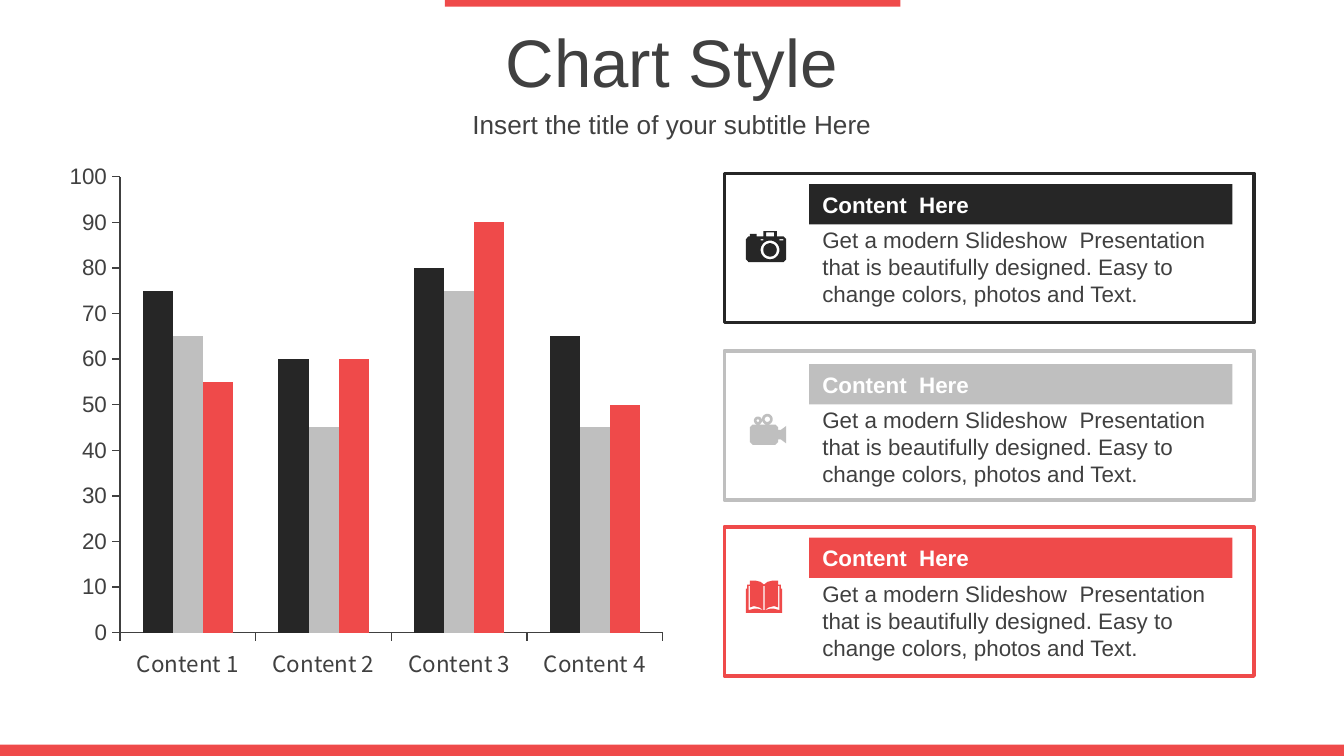
import math
from dataclasses import dataclass

import lxml.etree
import pptx
import pptx.chart.data
import pptx.dml.color
import pptx.enum.chart
import pptx.enum.shapes
import pptx.enum.text
import pptx.oxml.ns
import pptx.util

Inches = pptx.util.Inches
Pt = pptx.util.Pt


@dataclass(frozen=True)
class Theme:
    dark: str = "262626"
    grey: str = "BFBFBF"
    red: str = "EF4A4A"
    white: str = "FFFFFF"
    text: str = "404040"
    font: str = "Arial"
    category_font: str = "Noto Sans CJK KR"
    title_size: int = 36
    subtitle_size: int = 14
    body_size: int = 12
    frame_width: int = 2
    axis_width: float = 0.75


def rgb(color):
    return pptx.dml.color.RGBColor.from_string(color)


def set_font(font, name, size, color, bold=False):
    font.name, font.size, font.bold = name, Pt(size), bold
    font.color.rgb = rgb(color)


def write_text(shape, text, *, font, size, color, bold=False, align="LEFT"):
    frame = shape.text_frame
    frame.word_wrap = True
    frame.vertical_anchor = pptx.enum.text.MSO_ANCHOR.MIDDLE
    paragraph = frame.paragraphs[0]
    paragraph.alignment = pptx.enum.text.PP_ALIGN[align]
    run = paragraph.add_run()
    run.text = text
    set_font(run.font, font, size, color, bold)


def circle(x, y, radius, steps=32):
    angles = [2 * math.pi * step / steps for step in range(steps)]
    return [(x + radius * math.cos(a), y + radius * math.sin(a)) for a in angles]


def box(left, top, right, bottom):
    return [(left, top), (right, top), (right, bottom), (left, bottom)]


def mirror(points, axis):
    """Reflect points across a vertical line and reverse their order."""
    return [(2 * axis - x, y) for x, y in reversed(points)]


def camera_outlines():
    body = [(5.55, 1.78), (5.57, 1.76), (5.58, 1.76), (5.58, 1.74), (5.63, 1.74),
            (5.63, 1.76), (5.68, 1.76), (5.68, 1.72), (5.78, 1.72), (5.78, 1.76),
            (5.83, 1.76), (5.85, 1.78), (5.85, 1.93), (5.83, 1.95), (5.57, 1.95),
            (5.55, 1.93)]
    return [body, circle(5.73, 1.86, 0.07), circle(5.73, 1.86, 0.05),
            box(5.66, 1.78, 5.68, 1.79), box(5.8, 1.78, 5.83, 1.79),
            box(5.7, 1.73, 5.76, 1.76)]


def camcorder_outlines():
    body = [(5.58, 3.18), (5.6, 3.16), (5.77, 3.16), (5.79, 3.18), (5.79, 3.2),
            (5.81, 3.2), (5.85, 3.17), (5.85, 3.3), (5.81, 3.27), (5.79, 3.27),
            (5.79, 3.29), (5.77, 3.31), (5.6, 3.31), (5.58, 3.29)]
    return [body, circle(5.71, 3.12, 0.04), circle(5.71, 3.12, 0.02),
            circle(5.64, 3.13, 0.03), circle(5.64, 3.13, 0.01)]


def book_outlines():
    left_spine, right_spine = 5.68, 5.69
    middle = (left_spine + right_spine) / 2
    cover = [(5.55, 4.56), (5.55, 4.38), (5.56, 4.38), (5.56, 4.35), (5.58, 4.35),
             (5.58, 4.32), (5.62, 4.32), (5.66, 4.33), (middle, 4.35)]
    page_edge = [(5.57, 4.36), (5.58, 4.36), (5.58, 4.52), (5.61, 4.51),
                 (5.65, 4.52), (5.68, 4.54), (5.64, 4.53), (5.61, 4.53), (5.57, 4.54)]
    return [cover + mirror(cover, middle), page_edge, mirror(page_edge, middle),
            box(left_spine, 4.36, right_spine, 4.54)]


class SlideBuilder:
    def __init__(self, slide, theme):
        self.slide, self.theme = slide, theme

    def style(self, shape, fill, line=None):
        shape.shadow.inherit = False
        shape.fill.solid()
        shape.fill.fore_color.rgb = rgb(fill)
        if line:
            shape.line.color.rgb = rgb(line)
            shape.line.width = Pt(self.theme.frame_width)
        else:
            shape.line.fill.background()

    def rectangle(self, left, top, width, height, fill, line=None):
        shape = self.slide.shapes.add_shape(
            pptx.enum.shapes.MSO_SHAPE.RECTANGLE,
            Inches(left), Inches(top), Inches(width), Inches(height))
        self.style(shape, fill, line)
        return shape

    def text(self, left, top, width, height, text, size, align="LEFT"):
        shape = self.slide.shapes.add_textbox(
            Inches(left), Inches(top), Inches(width), Inches(height))
        write_text(shape, text, font=self.theme.font, size=size,
                   color=self.theme.text, align=align)

    def icon(self, outlines, color):
        """Draw closed outlines as one freeform; inner ones become holes."""
        builder = None
        for outline in outlines:
            points = [(Inches(x), Inches(y)) for x, y in outline]
            if builder is None:
                builder = self.slide.shapes.build_freeform(*points[0])
            else:
                builder.move_to(*points[0])
            builder.add_line_segments(points[1:], close=True)
        self.style(builder.convert_to_shape(), color)

    def card(self, top, header_top, heading, body, color, icon):
        theme = self.theme
        self.rectangle(5.39, top, 3.94, 1.11, theme.white, color)
        self.text(6.02, header_top + 0.26, 3.15, 0.71, body, theme.body_size)
        header = self.rectangle(6.02, header_top, 3.15, 0.3, color)
        write_text(header, heading, font=theme.font, size=theme.body_size,
                   color=theme.white, bold=True)
        self.icon(icon, color)

    def column_chart(self, left, top, width, height, categories, series, colors):
        theme = self.theme
        data = pptx.chart.data.CategoryChartData()
        data.categories = categories
        for name, values in series.items():
            data.add_series(name, values)
        chart = self.slide.shapes.add_chart(
            pptx.enum.chart.XL_CHART_TYPE.COLUMN_CLUSTERED,
            Inches(left), Inches(top), Inches(width), Inches(height), data).chart
        chart.has_legend = chart.has_title = False
        set_font(chart.font, theme.font, theme.body_size, theme.text)
        plot = chart.plots[0]
        plot.gap_width, plot.overlap, plot.vary_by_categories = 150, 0, False
        for column, color in zip(plot.series, colors):
            column.format.fill.solid()
            column.format.fill.fore_color.rgb = rgb(color)
        axis_fonts = ((chart.category_axis, theme.category_font),
                      (chart.value_axis, theme.font))
        for axis, font in axis_fonts:
            axis.has_major_gridlines = False
            axis.major_tick_mark = pptx.enum.chart.XL_TICK_MARK.OUTSIDE
            axis.minor_tick_mark = pptx.enum.chart.XL_TICK_MARK.NONE
            axis.format.line.color.rgb = rgb(theme.text)
            axis.format.line.width = Pt(theme.axis_width)
            set_font(axis.tick_labels.font, font, theme.body_size, theme.text)
        values = chart.value_axis
        values.minimum_scale, values.maximum_scale, values.major_unit = 0, 100, 10
        self.place_plot(chart, x=0.1, y=0.04, w=0.87, h=0.87)

    def place_plot(self, chart, **fractions):
        """Fix the inner plot area as fractions of the chart's size."""
        qn = pptx.oxml.ns.qn
        area = chart.element.find(".//" + qn("c:plotArea"))
        for old_layout in area.findall(qn("c:layout")):
            area.remove(old_layout)
        layout = lxml.etree.Element(qn("c:layout"))
        manual = lxml.etree.SubElement(layout, qn("c:manualLayout"))
        settings = {"layoutTarget": "inner", "xMode": "edge", "yMode": "edge", **fractions}
        for tag, value in settings.items():
            lxml.etree.SubElement(manual, qn("c:" + tag)).set("val", str(value))
        area.insert(0, layout)


def main():
    theme = Theme()
    presentation = pptx.Presentation()
    presentation.slide_width = Inches(10)
    presentation.slide_height = Inches(10 * 9 / 16)
    slide = presentation.slides.add_slide(presentation.slide_layouts[6])
    builder = SlideBuilder(slide, theme)
    colors = (theme.dark, theme.grey, theme.red)

    builder.rectangle(3.31, 0, 3.39, 0.05, theme.red)
    builder.rectangle(0, 5.54, 10, 0.09, theme.red)
    builder.text(0, 0.14, 10, 0.63, "Chart Style", theme.title_size, "CENTER")
    builder.text(0, 0.77, 10, 0.31, "Insert the title of your subtitle Here",
                 theme.subtitle_size, "CENTER")

    body = ("Get a modern Slideshow  Presentation that is beautifully designed. "
            "Easy to change colors, photos and Text.")
    header_tops = (1.37, 2.71, 4)
    icons = (camera_outlines(), camcorder_outlines(), book_outlines())
    card_tops = (1.29, 2.61, 3.92)
    for card_top, header_top, color, icon in zip(card_tops, header_tops, colors, icons):
        builder.card(card_top, header_top, "Content  Here", body, color, icon)

    builder.column_chart(
        0.43, 1.16, 4.64, 3.9,
        [f"Content {number}" for number in range(1, 5)],
        {"Series 1": (75, 60, 80, 65),
         "Series 2": (65, 45, 75, 45),
         "Series 3": (55, 60, 90, 50)},
        colors)
    presentation.save("out.pptx")


if __name__ == "__main__":
    main()
